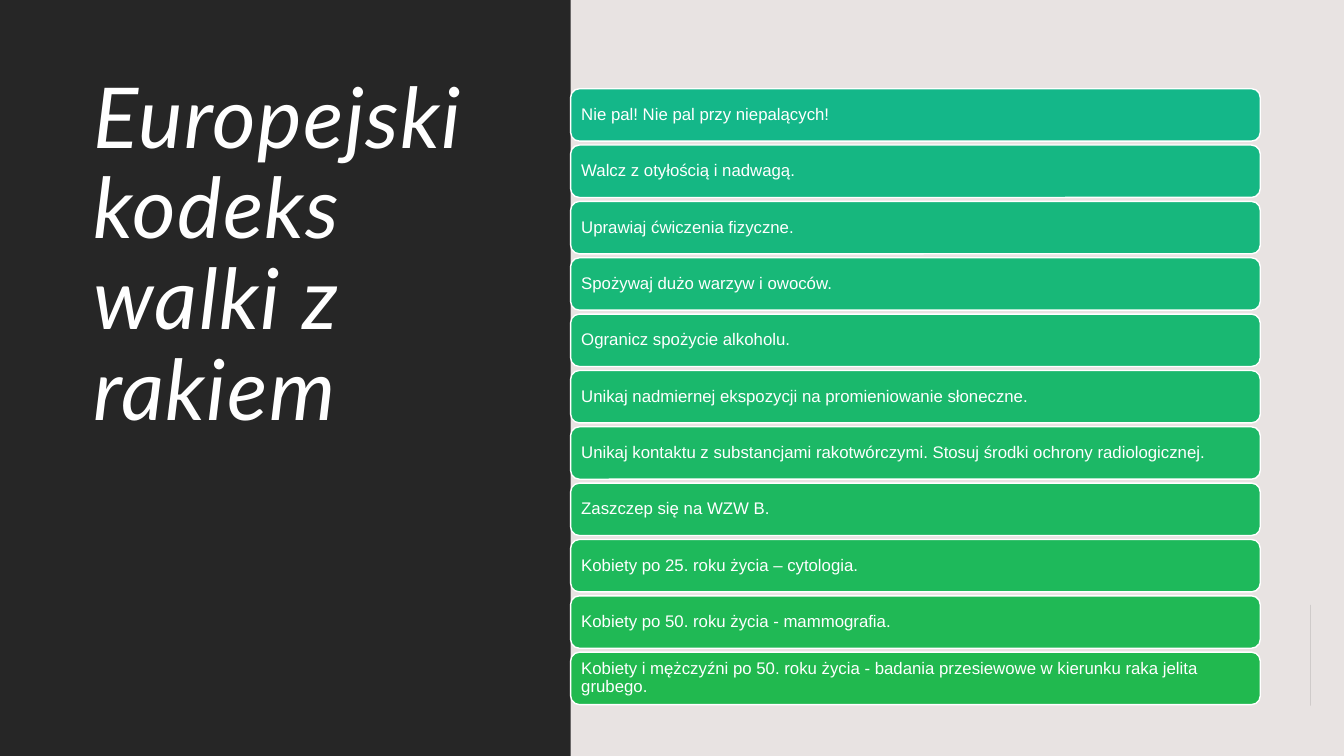
import math

import pptx
import pptx.dml.color
import pptx.enum.shapes
import pptx.enum.text
import pptx.util

WIDTH, HEIGHT = 13.33, 7.5
PANEL_WIDTH = 5.66
BAR_WIDTH, BAR_HEIGHT = 6.84, 0.52
BARS_TOP, BAR_STEP = 0.88, 0.559
CIRCLE_RADIUS, CIRCLE_MIDDLE = 0.45, 6.77

COLOURS = {
    "background": "E8E3E2",
    "dark": "262626",
    "white": "FFFFFF",
    "first_bar": "14B789",
    "last_bar": "21B94F",
}

TITLE = "Europejski kodeks walki z rakiem"
RULES = [
    "Nie pal! Nie pal przy niepalących!",
    "Walcz z otyłością i nadwagą.",
    "Uprawiaj ćwiczenia fizyczne.",
    "Spożywaj dużo warzyw i owoców.",
    "Ogranicz spożycie alkoholu.",
    "Unikaj nadmiernej ekspozycji na promieniowanie słoneczne.",
    "Unikaj kontaktu z substancjami rakotwórczymi. Stosuj środki ochrony radiologicznej.",
    "Zaszczep się na WZW B.",
    "Kobiety po 25. roku życia – cytologia.",
    "Kobiety po 50. roku życia - mammografia.",
    "Kobiety i mężczyźni po 50. roku życia - badania przesiewowe w kierunku raka jelita grubego.",
]


def inches(*lengths):
    return [pptx.util.Inches(length) for length in lengths]


def rgb(colour):
    return pptx.dml.color.RGBColor.from_string(colour)


def blend(start, end, share):
    """Return the hex colour lying at the given share between two others."""
    pairs = zip(bytes.fromhex(start), bytes.fromhex(end))
    return "".join(f"{round(a + (b - a) * share):02X}" for a, b in pairs)


def paint(shape, fill, line=None):
    shape.shadow.inherit = False
    shape.fill.solid()
    shape.fill.fore_color.rgb = rgb(fill)
    if line:
        shape.line.color.rgb = rgb(line)
        shape.line.width = pptx.util.Pt(1)
    else:
        shape.line.fill.background()


def write(shape, text, font, size, colour, italic=False, spacing=0, insets=(0.1, 0.05, 0.1, 0.05)):
    """Fill a shape with one left-aligned paragraph, centred vertically within its insets."""
    frame = shape.text_frame
    frame.word_wrap = True
    frame.auto_size = pptx.enum.text.MSO_AUTO_SIZE.NONE
    frame.vertical_anchor = pptx.enum.text.MSO_ANCHOR.MIDDLE
    (frame.margin_left, frame.margin_top,
     frame.margin_right, frame.margin_bottom) = inches(*insets)
    para = frame.paragraphs[0]
    para.alignment = pptx.enum.text.PP_ALIGN.LEFT
    para.line_spacing = 0.9
    para.space_before = pptx.util.Pt(0)
    span = para.add_run()
    span.text = text
    span.font.name = font
    span.font.size = pptx.util.Pt(size)
    span.font.italic = italic
    span.font.color.rgb = rgb(colour)
    if spacing:
        span.font._element.set("spc", str(spacing * 100))


def add_panel(page):
    panel = page.shapes.add_shape(
        pptx.enum.shapes.MSO_SHAPE.RECTANGLE, *inches(0, 0, PANEL_WIDTH, HEIGHT))
    paint(panel, COLOURS["dark"])
    page.shapes.title.element.addprevious(panel.element)


def place_title(page):
    title = page.shapes.title
    title.left, title.top, title.width, title.height = inches(0.83, 0.83, 4.19, 5.2)
    write(title, TITLE, font="Lato", size=60, colour=COLOURS["white"], italic=True,
          spacing=1, insets=(0.1, 0, 0.1, 1.76))


def add_half_circle(page, segments=52):
    """Draw the left half of a circle against the right edge of the page."""
    points = []
    for step in range(segments + 1):
        angle = math.pi * step / segments
        points.append((WIDTH - CIRCLE_RADIUS * math.sin(angle),
                       CIRCLE_MIDDLE - CIRCLE_RADIUS * math.cos(angle)))
    builder = page.shapes.build_freeform(*points[0], scale=pptx.util.Inches(1))
    builder.add_line_segments(points[1:], close=True)
    paint(builder.convert_to_shape(), COLOURS["dark"])


def add_rule_bar(page, row, text):
    bar = page.shapes.add_shape(
        pptx.enum.shapes.MSO_SHAPE.ROUNDED_RECTANGLE,
        *inches(PANEL_WIDTH, BARS_TOP + row * BAR_STEP, BAR_WIDTH, BAR_HEIGHT))
    share = row / (len(RULES) - 1)
    paint(bar, blend(COLOURS["first_bar"], COLOURS["last_bar"], share), COLOURS["white"])
    write(bar, text, font="Arial", size=12, colour=COLOURS["white"],
          insets=(0.08, 0.05, 0.08, 0.05))


def main():
    deck = pptx.Presentation()
    deck.slide_width, deck.slide_height = inches(WIDTH, HEIGHT)
    page = deck.slides.add_slide(deck.slide_layouts.get_by_name("Title Only"))
    page.background.fill.solid()
    page.background.fill.fore_color.rgb = rgb(COLOURS["background"])
    add_panel(page)
    place_title(page)
    add_half_circle(page)
    for row, text in enumerate(RULES):
        add_rule_bar(page, row, text)
    deck.save("out.pptx")


if __name__ == "__main__":
    main()
